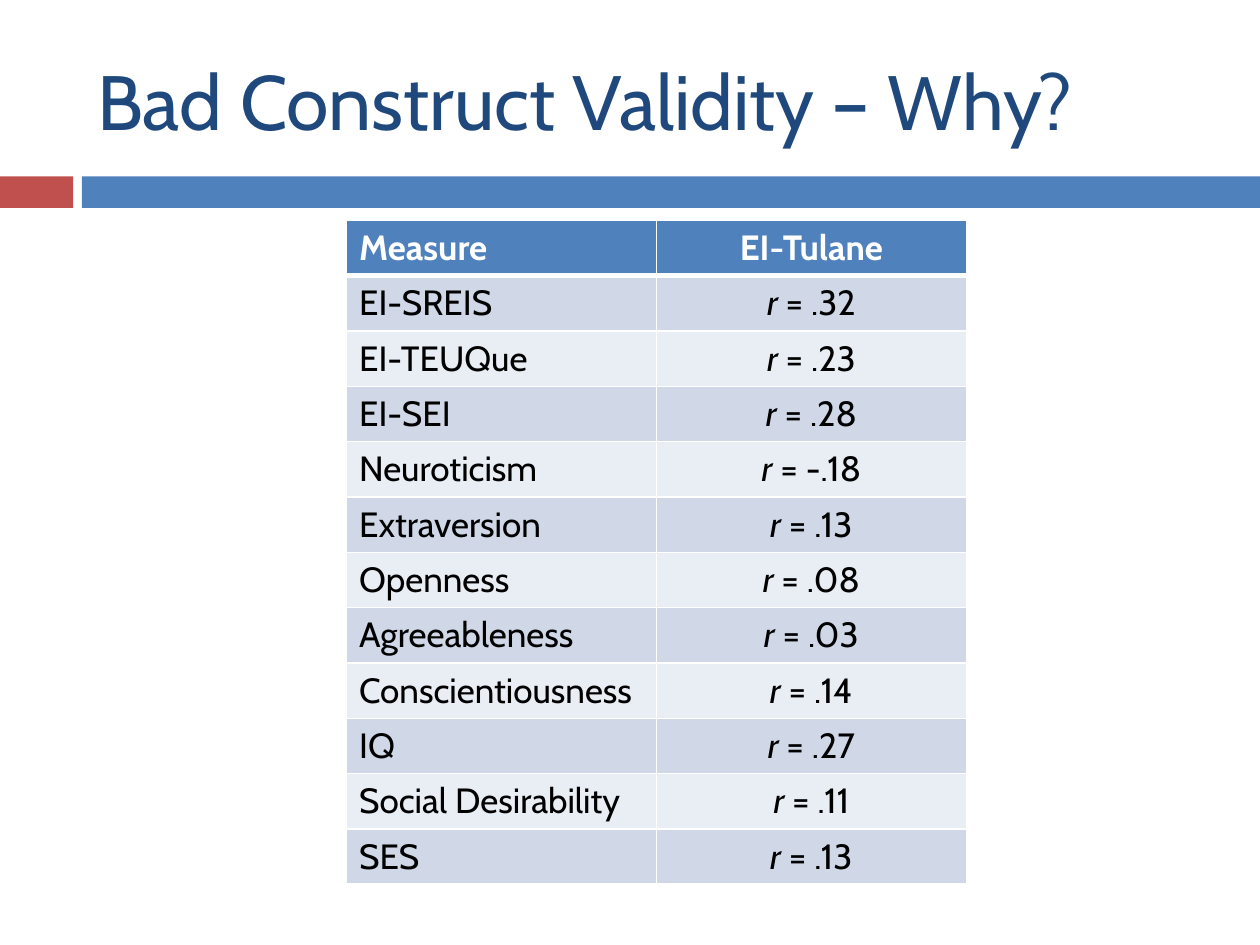
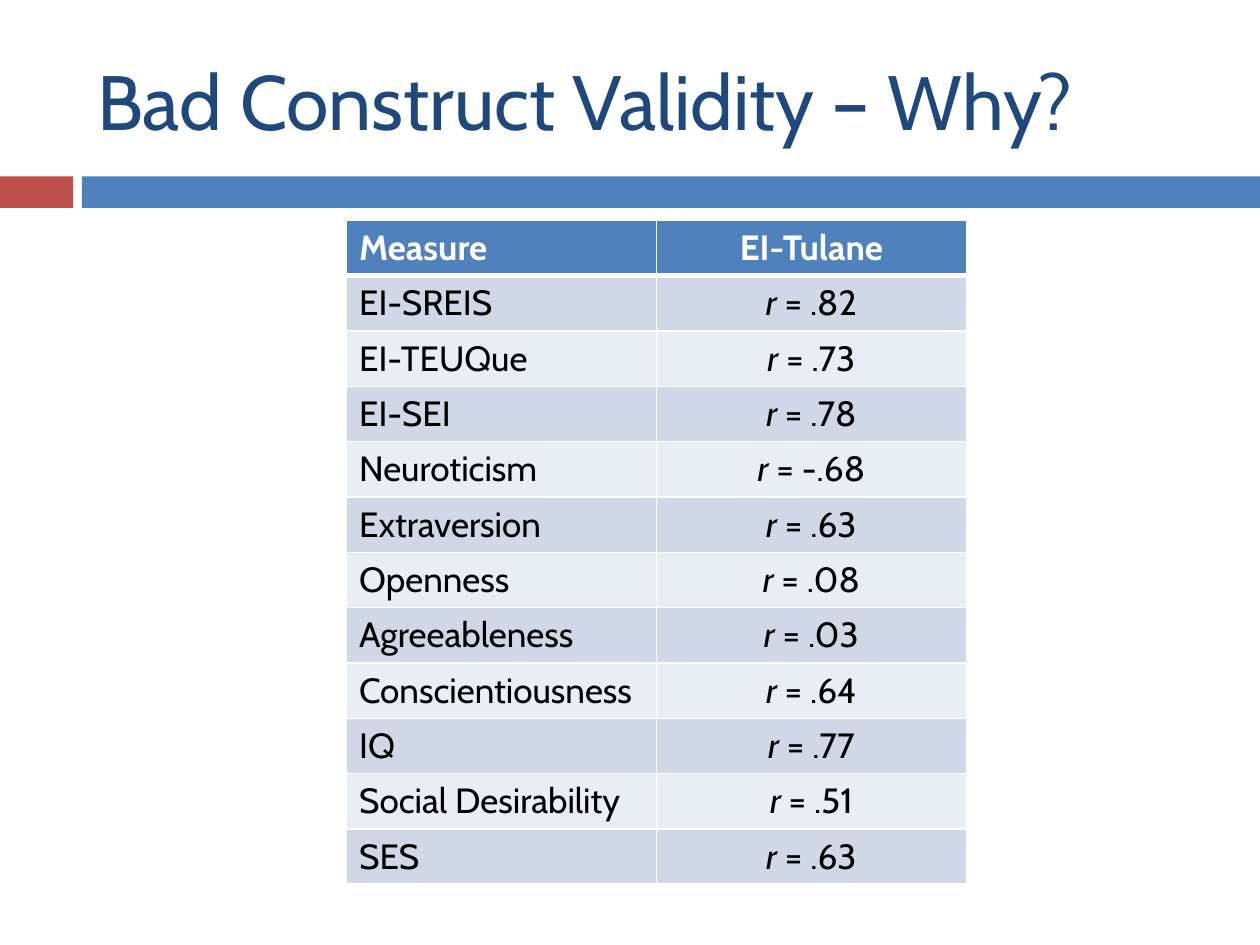
from dataclasses import dataclass

from lxml.etree import SubElement
from pptx import Presentation
from pptx.dml.color import RGBColor
from pptx.enum.shapes import MSO_SHAPE
from pptx.enum.text import MSO_ANCHOR, MSO_AUTO_SIZE, PP_ALIGN
from pptx.oxml.ns import qn
from pptx.util import Inches, Pt

# Shared look
FONT = "Cabin"
BLUE, RED, NAVY = "4F81BD", "C0504D", "1F497D"
WHITE, BLACK = "FFFFFF", "000000"
ROW_FILLS = ("D0D8E8", "E9EDF4")
TITLE_FORMAT = {"name": FONT, "size": Pt(44), "bold": False}
HEADER_FORMAT = {"name": FONT, "size": Pt(20), "bold": True}
BODY_FORMAT = {"name": FONT, "size": Pt(20), "bold": False}

# The page is a grid of 100 columns by 75 rows
WIDTH, HEIGHT = Inches(10), Inches(7.5)
COLUMNS, ROWS = 100, 75


@dataclass(frozen=True)
class Box:
    """A place on the page in grid columns and rows."""
    column: float
    row: float
    columns: float
    rows: float

    def frame(self) -> dict[str, int]:
        return {
            "left": round(WIDTH * self.column / COLUMNS),
            "top": round(HEIGHT * self.row / ROWS),
            "width": round(WIDTH * self.columns / COLUMNS),
            "height": round(HEIGHT * self.rows / ROWS),
        }


@dataclass(frozen=True)
class Band:
    box: Box
    fill: str


@dataclass(frozen=True)
class CorrelationPage:
    title: str
    measure: str
    correlations: tuple[str, ...]


TITLE_BOX = Box(6.7, 2.5, 89.2, 10.8)
TABLE_BOX = Box(27.5, 17.5, 49.2, 52)
BANDS = (
    Band(Box(0, 14, 5.8, 2.5), RED),
    Band(Box(6.5, 14, 93.5, 2.5), BLUE),
)

# Content
MEASURES = (
    "EI-SREIS", "EI-TEUQue", "EI-SEI", "Neuroticism", "Extraversion", "Openness",
    "Agreeableness", "Conscientiousness", "IQ", "Social Desirability", "SES",
)
TITLE = "Bad Construct Validity – Why?"
PAGES = (
    CorrelationPage(TITLE, "EI-Tulane", (
        ".32", ".23", ".28", "-.18", ".13", ".08", ".03", ".14", ".27", ".11", ".13")),
    CorrelationPage(TITLE, "EI-Tulane", (
        ".82", ".73", ".78", "-.68", ".63", ".08", ".03", ".64", ".77", ".51", ".63")),
)


def color(value: str) -> RGBColor:
    return RGBColor.from_string(value)


def set_values(target, values: dict) -> None:
    for name, value in values.items():
        setattr(target, name, value)


def add_span(para, text: str, values: dict, ink: str, italic: bool = False) -> None:
    span = para.add_run()
    span.text = text
    set_values(span.font, {**values, "italic": italic})
    span.font.color.rgb = color(ink)


def add_title(page, text: str) -> None:
    title = page.shapes.title
    set_values(title, TITLE_BOX.frame())
    set_values(title.text_frame, {
        "vertical_anchor": MSO_ANCHOR.MIDDLE,
        "auto_size": MSO_AUTO_SIZE.NONE,
        "word_wrap": True,
    })
    para = title.text_frame.paragraphs[0]
    para.alignment = PP_ALIGN.LEFT
    add_span(para, text, TITLE_FORMAT, NAVY)


def add_band(page, band: Band) -> None:
    shape = page.shapes.add_shape(MSO_SHAPE.RECTANGLE, **band.box.frame())
    shape.shadow.inherit = False
    shape.fill.solid()
    shape.fill.fore_color.rgb = color(band.fill)
    shape.line.fill.background()


def add_borders(cell, top: float, bottom: float) -> None:
    properties = cell._tc.get_or_add_tcPr()
    for side, points in {"L": 1, "R": 1, "T": top, "B": bottom}.items():
        line = SubElement(properties, qn(f"a:ln{side}"), w=str(Pt(points)))
        fill = SubElement(line, qn("a:solidFill"))
        SubElement(fill, qn("a:srgbClr"), val=WHITE)


def style_cell(cell, row: int, column: int) -> None:
    # The rule below the header is thicker than the others
    add_borders(cell, top=3 if row == 1 else 1, bottom=3 if row == 0 else 1)
    cell.fill.solid()
    cell.fill.fore_color.rgb = color(ROW_FILLS[(row - 1) % 2] if row else BLUE)
    cell.vertical_anchor = MSO_ANCHOR.MIDDLE if row else MSO_ANCHOR.TOP
    para = cell.text_frame.paragraphs[0]
    para.alignment = PP_ALIGN.CENTER if column else PP_ALIGN.LEFT


def add_correlation_table(page, content: CorrelationPage) -> None:
    frame = page.shapes.add_table(len(MEASURES) + 1, 2, **TABLE_BOX.frame())
    table = frame.table
    set_values(table, {"first_row": False, "horz_banding": False})
    for row_number, row in enumerate(table.rows):
        for column_number, cell in enumerate(row.cells):
            style_cell(cell, row_number, column_number)

    # Header row
    for column, heading in enumerate(("Measure", content.measure)):
        para = table.cell(0, column).text_frame.paragraphs[0]
        add_span(para, heading, HEADER_FORMAT, WHITE)

    # One row for each measure
    for row, (measure, value) in enumerate(zip(MEASURES, content.correlations), start=1):
        name, correlation = (table.cell(row, column).text_frame.paragraphs[0]
                             for column in range(2))
        add_span(name, measure, BODY_FORMAT, BLACK)
        add_span(correlation, "r", BODY_FORMAT, BLACK, italic=True)
        add_span(correlation, f" = {value}", BODY_FORMAT, BLACK)


def main() -> None:
    deck = Presentation()
    set_values(deck, {"slide_width": WIDTH, "slide_height": HEIGHT})
    title_only = deck.slide_layouts.get_by_name("Title Only")
    for content in PAGES:
        page = deck.slides.add_slide(title_only)
        for band in BANDS:
            add_band(page, band)
        add_title(page, content.title)
        add_correlation_table(page, content)
    deck.save("out.pptx")


if __name__ == "__main__":
    main()
